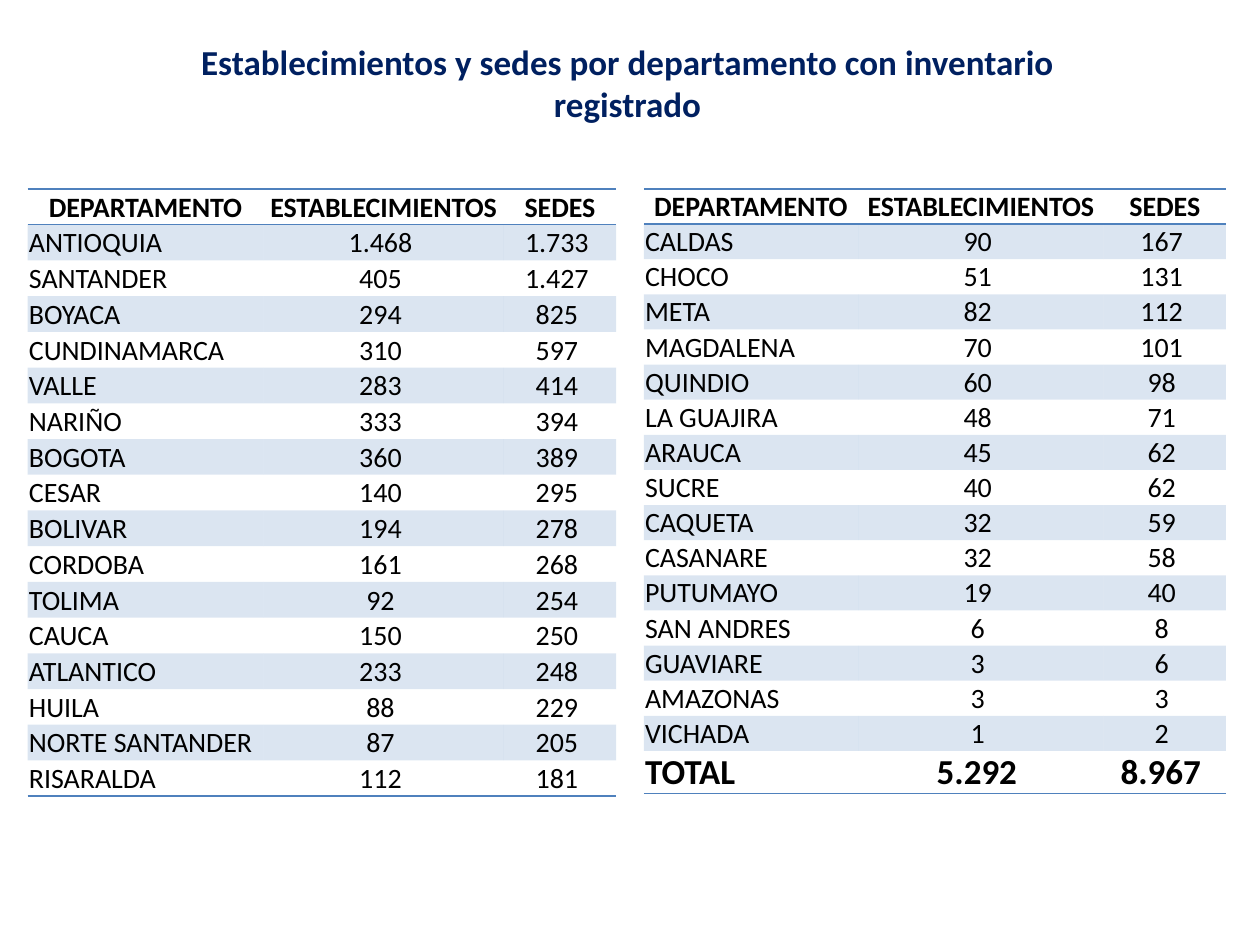
import pptx
import pptx.dml.color
import pptx.enum.text
import pptx.oxml
import pptx.oxml.ns
import pptx.util
from pptx.util import Inches

TITLE = "Establecimientos y sedes por departamento con inventario registrado"
HEADER = ("DEPARTAMENTO", "ESTABLECIMIENTOS", "SEDES")
LEFT_ROWS = [
    ("ANTIOQUIA", "1.468", "1.733"),
    ("SANTANDER", "405", "1.427"),
    ("BOYACA", "294", "825"),
    ("CUNDINAMARCA", "310", "597"),
    ("VALLE", "283", "414"),
    ("NARIÑO", "333", "394"),
    ("BOGOTA", "360", "389"),
    ("CESAR", "140", "295"),
    ("BOLIVAR", "194", "278"),
    ("CORDOBA", "161", "268"),
    ("TOLIMA", "92", "254"),
    ("CAUCA", "150", "250"),
    ("ATLANTICO", "233", "248"),
    ("HUILA", "88", "229"),
    ("NORTE SANTANDER", "87", "205"),
    ("RISARALDA", "112", "181"),
]
RIGHT_ROWS = [
    ("CALDAS", "90", "167"),
    ("CHOCO", "51", "131"),
    ("META", "82", "112"),
    ("MAGDALENA", "70", "101"),
    ("QUINDIO", "60", "98"),
    ("LA GUAJIRA", "48", "71"),
    ("ARAUCA", "45", "62"),
    ("SUCRE", "40", "62"),
    ("CAQUETA", "32", "59"),
    ("CASANARE", "32", "58"),
    ("PUTUMAYO", "19", "40"),
    ("SAN ANDRES", "6", "8"),
    ("GUAVIARE", "3", "6"),
    ("AMAZONAS", "3", "3"),
    ("VICHADA", "1", "2"),
    ("TOTAL", "5.292", "8.967"),
]
TABLES = [
    {"left": 0.22, "height": 4.82, "cols": (1.87, 1.91, 0.89), "rows": LEFT_ROWS},
    {"left": 5.11, "height": 4.8, "cols": (1.7, 1.95, 0.97), "rows": RIGHT_ROWS},
]
TOP = 1.5
TOTAL_HEIGHT = 0.34
PLAIN_STYLE = "{2D5ABB26-0587-4C30-8999-92F81FD0307C}"
THEME = {
    "font": "Calibri",
    "title": "002060",
    "text": "000000",
    "accent": "4F81BD",
    "band_alpha": 20,
    "body_size": 16,
    "large_size": 20,
    "rule": 1,
}
ALIGN = pptx.enum.text.PP_ALIGN


def write(tf, text, size=THEME["body_size"], color=THEME["text"], bold=False, align=ALIGN.CENTER):
    p = tf.paragraphs[0]
    p.alignment = align
    r = p.add_run()
    r.text = text
    r.font.name = THEME["font"]
    r.font.size = pptx.util.Pt(size)
    r.font.bold = bold
    r.font.color.rgb = pptx.dml.color.RGBColor.from_string(color)


def add_rule(cell, side):
    ns = pptx.oxml.ns.nsdecls("a")
    width = pptx.util.Pt(THEME["rule"])
    cell._tc.get_or_add_tcPr().append(pptx.oxml.parse_xml(
        f'<a:{side} {ns} w="{width}"><a:solidFill><a:srgbClr val="{THEME["accent"]}"/>'
        f'</a:solidFill><a:prstDash val="solid"/></a:{side}>'))


def fill_band(cell):
    cell.fill.solid()
    cell.fill.fore_color.rgb = pptx.dml.color.RGBColor.from_string(THEME["accent"])
    color = cell._tc.tcPr.find(".//" + pptx.oxml.ns.qn("a:srgbClr"))
    alpha = color.makeelement(pptx.oxml.ns.qn("a:alpha"), {"val": str(THEME["band_alpha"] * 1000)})
    color.append(alpha)


def add_department_table(s, left, height, cols, rows):
    grid = [HEADER, *rows]
    last = len(grid) - 1
    frame = s.shapes.add_table(len(grid), len(cols), Inches(left), Inches(TOP),
                               Inches(sum(cols)), Inches(height))
    table = frame.table
    table.horz_banding = False
    table._tbl.tblPr.find(pptx.oxml.ns.qn("a:tableStyleId")).text = PLAIN_STYLE
    for column, width in zip(table.columns, cols):
        column.width = Inches(width)
    has_total = rows[-1][0] == "TOTAL"
    row_height = (height - TOTAL_HEIGHT) / last if has_total else height / len(grid)
    for i, values in enumerate(grid):
        total = has_total and i == last
        table.rows[i].height = Inches(TOTAL_HEIGHT if total else row_height)
        for j, value in enumerate(values):
            cell = table.cell(i, j)
            cell.margin_left = cell.margin_right = Inches(0.01)
            cell.margin_top = cell.margin_bottom = 0
            cell.vertical_anchor = pptx.enum.text.MSO_ANCHOR.BOTTOM
            if i == 0:
                add_rule(cell, "lnT")
            if i in (0, last):
                add_rule(cell, "lnB")
            if i % 2:
                fill_band(cell)
            else:
                cell.fill.background()
            write(cell.text_frame, f"{value} " if i and j else value,
                  size=THEME["large_size" if total else "body_size"],
                  bold=total or i == 0,
                  align=ALIGN.LEFT if i and j == 0 else ALIGN.CENTER)


def main():
    prs = pptx.Presentation()
    prs.slide_width, prs.slide_height = Inches(10), Inches(7.5)
    s = prs.slides.add_slide(prs.slide_layouts[6])
    add_department_table(s, **TABLES[0])
    sp = s.shapes.add_textbox(Inches(1.02), Inches(0.27), Inches(7.92), Inches(0.77))
    tf = sp.text_frame
    tf.word_wrap = True
    write(tf, TITLE, size=THEME["large_size"], color=THEME["title"], bold=True)
    add_department_table(s, **TABLES[1])
    prs.save("out.pptx")


if __name__ == "__main__":
    main()
